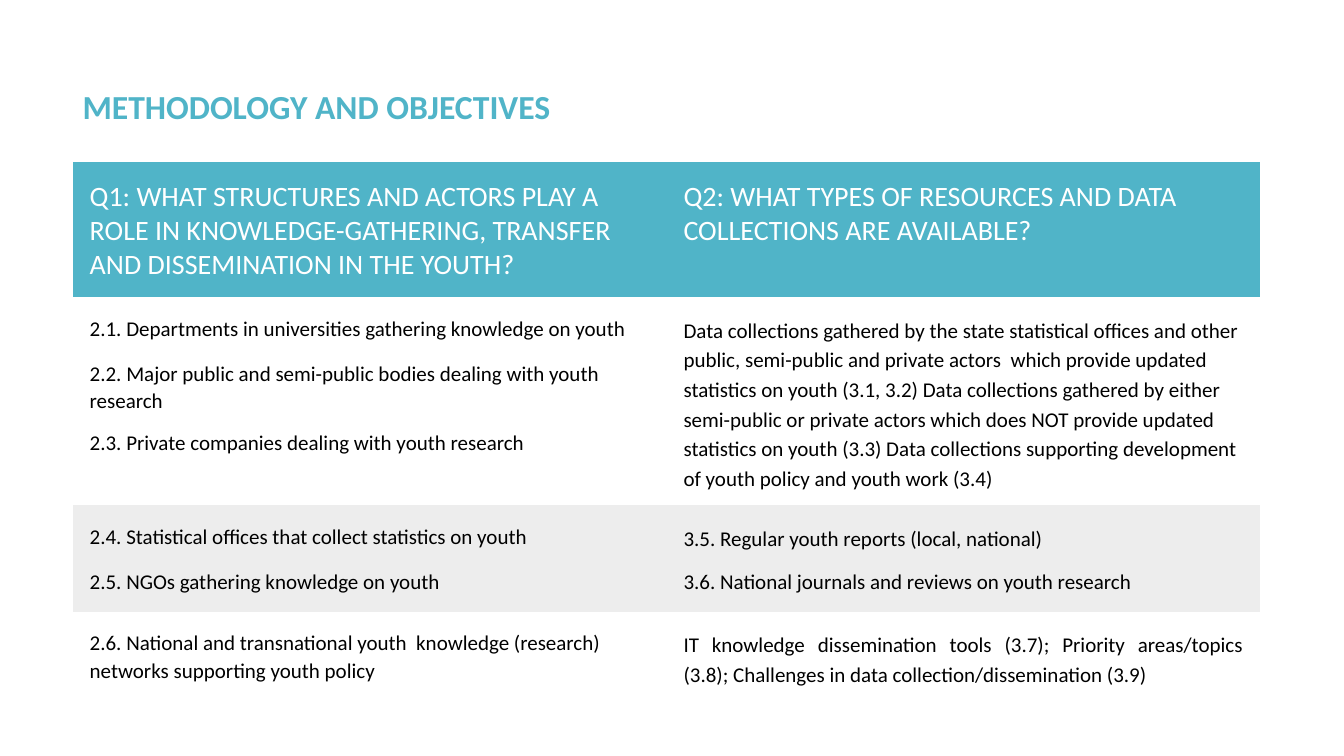
from pptx import Presentation
from pptx import util as u
from pptx.dml.color import RGBColor
from pptx.enum import text

FONT = "Calibri"
TEAL, WHITE, BLACK, GREY = "50B4C8", "FFFFFF", "000000", "EDEDED"
NO_GRID = "{2D5ABB26-0587-4C30-8999-92F81FD0307C}"
LEFT, JUSTIFY = text.PP_ALIGN.LEFT, text.PP_ALIGN.JUSTIFY

TITLE = "METHODOLOGY AND OBJECTIVES"
HEADS = [
    "Q1: WHAT STRUCTURES AND ACTORS PLAY A ROLE IN KNOWLEDGE-GATHERING, "
    "TRANSFER AND DISSEMINATION IN THE YOUTH?",
    "Q2: WHAT TYPES OF RESOURCES AND DATA COLLECTIONS ARE AVAILABLE?",
]
ACTORS = [
    [("2.1. Departments in universities gathering knowledge on youth", 10, 0, LEFT),
     ("2.2. Major public and semi-public bodies dealing with youth research", 12, 0, LEFT),
     ("2.3. Private companies dealing with youth research", 10, 10, JUSTIFY)],
    [("2.4. Statistical offices that collect statistics on youth", 0, 0, LEFT),
     ("2.5. NGOs gathering knowledge on youth", 12, 0, LEFT)],
    [("2.6. National and transnational youth  knowledge (research) networks "
      "supporting youth policy", 0, 0, LEFT)],
]
RESOURCES = [
    [("Data collections gathered by the state statistical offices and other public, "
      "semi-public and private actors  which provide updated statistics on youth "
      "(3.1, 3.2) Data collections gathered by either semi-public or private actors "
      "which does NOT provide updated statistics on youth (3.3) Data collections "
      "supporting development of youth policy and youth work (3.4)", 0, 0, LEFT)],
    [("3.5. Regular youth reports (local, national)", 0, 0, LEFT),
     ("3.6. National journals and reviews on youth research", 10, 0, LEFT)],
    [("IT knowledge dissemination tools (3.7); Priority areas/topics (3.8); "
      "Challenges in data collection/dissemination (3.9)", 0, 0, JUSTIFY)],
]
LINE_SPACING = [1.08, 1.15]
ROW_HEIGHTS = [1.28, 2.05, 1.01, 0.96]
ROW_FILLS = [TEAL, None, GREY, None]
LEFT_EDGE, COL_WIDTH, PAD = 0.72, 5.89, 0.17
TITLE_TOP, TITLE_HEIGHT = 0.55, 1.06


def color(value):
    return RGBColor.from_string(value)


def add_run(p, words, size, ink, bold=False):
    r = p.add_run()
    r.text = words
    r.font.name, r.font.size, r.font.bold = FONT, u.Pt(size), bold
    r.font.color.rgb = color(ink)


def write_cell(cell, paragraphs, spacing, size, ink, fill):
    cell.margin_left = cell.margin_right = u.Inches(PAD)
    cell.margin_top = cell.margin_bottom = u.Inches(PAD)
    if fill:
        cell.fill.solid()
        cell.fill.fore_color.rgb = color(fill)
    else:
        cell.fill.background()
    tf = cell.text_frame
    for i, (words, before, after, align) in enumerate(paragraphs):
        p = tf.add_paragraph() if i else tf.paragraphs[0]
        p.alignment, p.line_spacing = align, spacing
        p.space_before, p.space_after = u.Pt(before), u.Pt(after)
        add_run(p, words, size, ink)


def add_title(s):
    box = s.shapes.add_textbox(u.Inches(LEFT_EDGE), u.Inches(TITLE_TOP),
                               u.Inches(2 * COL_WIDTH), u.Inches(TITLE_HEIGHT))
    tf = box.text_frame
    tf.word_wrap = True
    tf.vertical_anchor = text.MSO_ANCHOR.MIDDLE
    p = tf.paragraphs[0]
    p.line_spacing = 0.85
    add_run(p, TITLE, 24, TEAL, True)


def add_questions(s):
    frame = s.shapes.add_table(
        len(ROW_HEIGHTS), len(HEADS), u.Inches(LEFT_EDGE),
        u.Inches(TITLE_TOP + TITLE_HEIGHT), u.Inches(2 * COL_WIDTH),
        u.Inches(sum(ROW_HEIGHTS)))
    table = frame.table
    table.first_row = table.horz_banding = False
    table._tbl.tblPr[0].text = NO_GRID
    for row, height in zip(table.rows, ROW_HEIGHTS):
        row.height = u.Inches(height)
    for col, (head, body) in enumerate(zip(HEADS, (ACTORS, RESOURCES))):
        table.columns[col].width = u.Inches(COL_WIDTH)
        write_cell(table.cell(0, col), [(head, 0, 0, LEFT)], 1.0, 20, WHITE, ROW_FILLS[0])
        for row, paragraphs in enumerate(body, 1):
            write_cell(table.cell(row, col), paragraphs, LINE_SPACING[col], 15, BLACK,
                       ROW_FILLS[row])


def main():
    prs = Presentation()
    prs.slide_width, prs.slide_height = u.Inches(13.33), u.Inches(7.5)
    s = prs.slides.add_slide(prs.slide_layouts[6])
    add_title(s)
    add_questions(s)
    prs.save("out.pptx")


if __name__ == "__main__":
    main()
